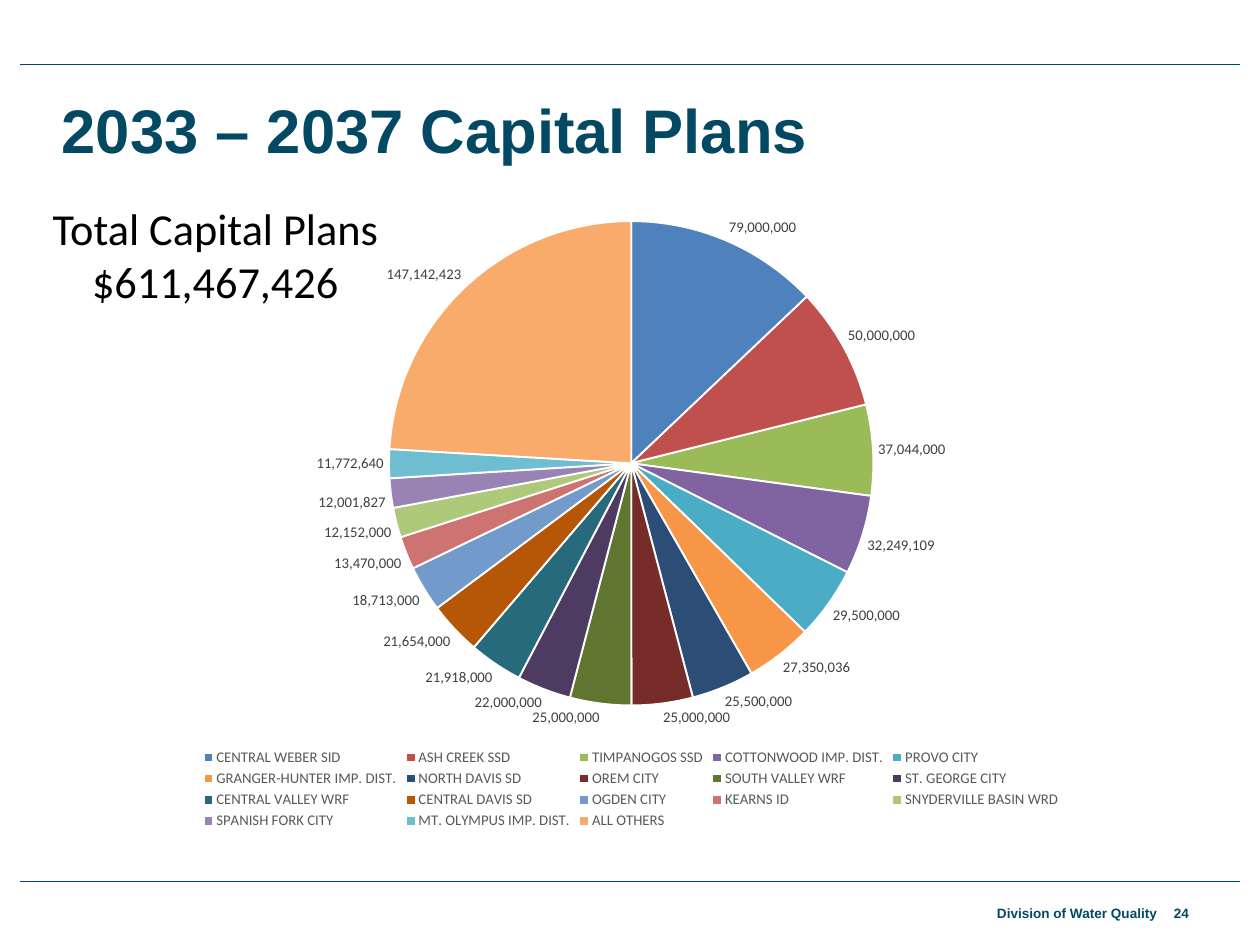
from pptx import Presentation
from pptx.chart.data import CategoryChartData
from pptx.dml.color import RGBColor
from pptx.enum.chart import XL_CHART_TYPE, XL_LABEL_POSITION, XL_LEGEND_POSITION
from pptx.enum.shapes import MSO_CONNECTOR
from pptx.enum.text import MSO_ANCHOR, PP_ALIGN
from pptx.oxml import parse_xml
from pptx.oxml.ns import nsdecls, qn
from pptx.util import Pt
from lxml.etree import SubElement

NAVY = "034963"
NUMBER_FORMAT = "#,##0"

# Provider, planned spending, slice colour
CAPITAL_PLANS = [
    ("CENTRAL WEBER SID", 79000000, "4F81BD"),
    ("ASH CREEK SSD", 50000000, "C0504D"),
    ("TIMPANOGOS SSD", 37044000, "9BBB59"),
    ("COTTONWOOD IMP. DIST.", 32249109, "8064A2"),
    ("PROVO CITY", 29500000, "4BACC6"),
    ("GRANGER-HUNTER IMP. DIST.", 27350036, "F79646"),
    ("NORTH DAVIS SD", 25500000, "2C4D75"),
    ("OREM CITY", 25000000, "772C2A"),
    ("SOUTH VALLEY WRF", 25000000, "5F7530"),
    ("ST. GEORGE CITY", 22000000, "4D3B62"),
    ("CENTRAL VALLEY WRF", 21918000, "276A7C"),
    ("CENTRAL DAVIS SD", 21654000, "B65708"),
    ("OGDEN CITY", 18713000, "729ACA"),
    ("KEARNS ID", 13470000, "CD7371"),
    ("SNYDERVILLE BASIN WRD", 12152000, "AFC97A"),
    ("SPANISH FORK CITY", 12001827, "9983B5"),
    ("MT. OLYMPUS IMP. DIST.", 11772640, "6FBDD1"),
    ("ALL OTHERS", 147142423, "F9AB6B"),
]


def color(hex_string):
    return RGBColor.from_string(hex_string)


def set_font(font, size, hex_string, name="Calibri", bold=False):
    font.name = name
    font.size = Pt(size)
    font.bold = bold
    font.color.rgb = color(hex_string)


def place(shape, left, top, width, height):
    shape.left, shape.top = Pt(left), Pt(top)
    shape.width, shape.height = Pt(width), Pt(height)


def write(shape, text, size, hex_string, name="Arial", bold=True,
          align=PP_ALIGN.LEFT, anchor=MSO_ANCHOR.MIDDLE, wrap=True):
    frame = shape.text_frame
    frame.word_wrap = wrap
    frame.vertical_anchor = anchor
    paragraph = frame.paragraphs[0]
    paragraph.alignment = align
    run = paragraph.add_run()
    run.text = text
    set_font(run.font, size, hex_string, name, bold)


def add_text(slide, box, text, size, hex_string, **style):
    shape = slide.shapes.add_textbox(*map(Pt, box))
    write(shape, text, size, hex_string, **style)
    return shape


def add_rule(slide, top):
    line = slide.shapes.add_connector(
        MSO_CONNECTOR.STRAIGHT, Pt(16.5), Pt(top), Pt(1008), Pt(top))
    line.line.color.rgb = color(NAVY)
    line.line.width = Pt(0.5)
    SubElement(line._element.spPr, qn("a:effectLst"))


def set_plot_layout(chart, left, top, width, height):
    plot_area = chart._chartSpace.chart.plotArea
    for layout in plot_area.findall(qn("c:layout")):
        plot_area.remove(layout)
    plot_area.insert(0, parse_xml(
        f'<c:layout {nsdecls("c")}><c:manualLayout>'
        '<c:layoutTarget val="inner"/><c:xMode val="edge"/><c:yMode val="edge"/>'
        f'<c:x val="{left}"/><c:y val="{top}"/><c:w val="{width}"/><c:h val="{height}"/>'
        '</c:manualLayout></c:layout>'))


def add_pie(slide, box):
    names, values, slice_colors = zip(*CAPITAL_PLANS)
    data = CategoryChartData(number_format=NUMBER_FORMAT)
    data.categories = names
    data.add_series("Series 1", values)
    chart = slide.shapes.add_chart(XL_CHART_TYPE.PIE, *map(Pt, box), data).chart
    chart.has_title = False
    set_font(chart.font, 10, "000000")
    set_plot_layout(chart, 0.29, 0.04, 0.42, 0.76)

    # Legend
    chart.has_legend = True
    chart.legend.position = XL_LEGEND_POSITION.BOTTOM
    chart.legend.include_in_layout = False
    set_font(chart.legend.font, 12, "595959")

    # Slices
    plot = chart.plots[0]
    plot.vary_by_categories = True
    for index, slice_color in enumerate(slice_colors):
        slice_format = plot.series[0].points[index].format
        slice_format.fill.solid()
        slice_format.fill.fore_color.rgb = color(slice_color)
        slice_format.line.color.rgb = color("FFFFFF")
        slice_format.line.width = Pt(1.5)

    # Value labels
    plot.has_data_labels = True
    labels = plot.data_labels
    labels.show_value = True
    labels.show_percentage = False
    labels.number_format = NUMBER_FORMAT
    labels.number_format_is_linked = False
    labels.position = XL_LABEL_POSITION.OUTSIDE_END
    set_font(labels.font, 12, "404040")


def main():
    presentation = Presentation()
    presentation.slide_width, presentation.slide_height = Pt(1024), Pt(768)
    slide = presentation.slides.add_slide(presentation.slide_layouts[5])

    # Header and footer rules
    for top in (52, 716.5):
        add_rule(slide, top)

    # Title
    title = slide.shapes.title
    place(title, 43, 65, 940, 79)
    write(title, "2033 – 2037 Capital Plans", 50, NAVY)

    # Footer
    division = add_text(slide, (805.5, 731.5, 139, 21.5), "Division of Water Quality",
                        11, NAVY, align=PP_ALIGN.RIGHT, wrap=False)
    frame = division.text_frame
    frame.margin_left = frame.margin_right = Pt(4)
    frame.margin_top = frame.margin_bottom = Pt(4)
    add_text(slide, (947, 716.5, 61, 51.5), "24", 11, NAVY)

    # Chart and total
    add_pie(slide, (43, 159, 940, 518))
    add_text(slide, (26.5, 160, 297, 94), "Total Capital Plans $611,467,426", 36, "000000",
             name="Calibri", bold=False, align=PP_ALIGN.CENTER, anchor=MSO_ANCHOR.TOP)

    presentation.save("out.pptx")


if __name__ == "__main__":
    main()
